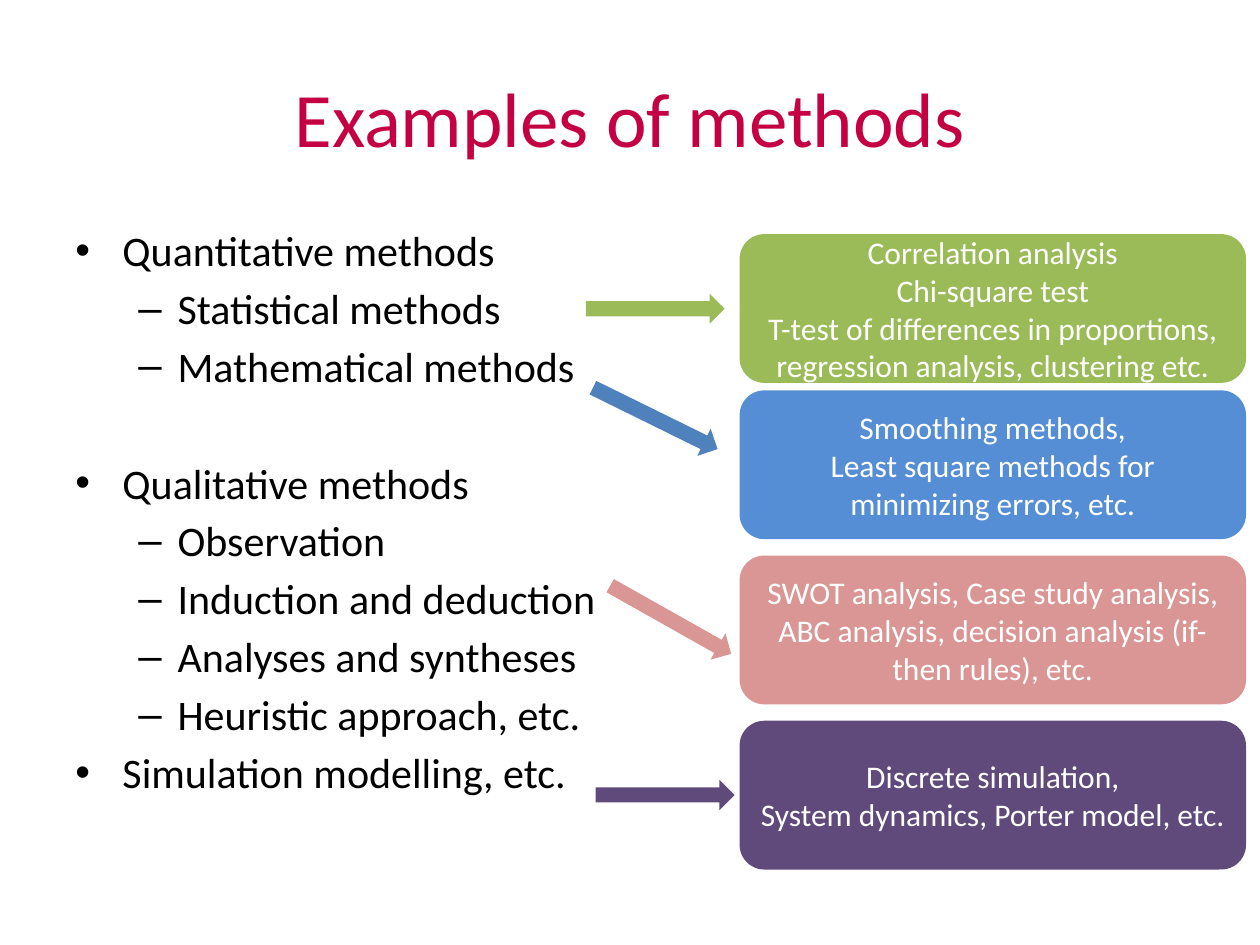
from lxml import etree
from pptx import Presentation
from pptx import util as u
from pptx.dml import color
from pptx.enum import shapes, text
from pptx.oxml import ns

COLORS = {
    "title": "C40043", "black": "000000", "white": "FFFFFF",
    "green": "9BBB59", "blue": "558ED5", "dark_blue": "4F81BD",
    "pink": "D99694", "purple": "604A7B",
}
FONT = "Calibri"

METHODS = [
    ("Quantitative methods", ["Statistical methods", "Mathematical methods"]),
    ("Qualitative methods", ["Observation", "Induction and deduction",
                             "Analyses and syntheses", "Heuristic approach, etc."]),
    ("Simulation modelling, etc.", []),
]
# bullet, left margin and hanging indent in cm
LEVELS = [("•", 0.95, 0.95), ("–", 2.06, 0.79)]
LINE_GAP, GROUP_GAP = 4.3, 37.9

# top in cm, fill, lines
CARDS = [
    (4.72, "green", ["Correlation analysis", "Chi-square test",
                     "T-test of differences in proportions, regression analysis, clustering etc."]),
    (7.87, "blue", ["Smoothing methods,", "Least square methods for minimizing errors, etc."]),
    (11.2, "pink", ["SWOT analysis, Case study analysis,",
                    "ABC analysis, decision analysis (if-then rules), etc."]),
    (14.53, "purple", ["Discrete simulation,", "System dynamics, Porter model, etc."]),
]
# left and top in cm, rotation in degrees, fill
ARROWS = [
    (11.81, 5.92, 0, "green"),
    (11.81, 8.13, 26.2, "dark_blue"),
    (12.12, 12.19, 29.4, "pink"),
    (12.01, 15.72, 0, "purple"),
]


def rgb(name):
    return color.RGBColor.from_string(COLORS[name])


def write(paragraph, words, size, fill, **formats):
    paragraph.text = words
    for name, value in formats.items():
        setattr(paragraph, name, value)
    for name, value in {"name": FONT, "size": u.Pt(size)}.items():
        setattr(paragraph.font, name, value)
    paragraph.font.color.rgb = rgb(fill)


def next_paragraph(frame, index):
    return frame.add_paragraph() if index else frame.paragraphs[0]


def add_text_frame(slide, box, anchor):
    frame = slide.shapes.add_textbox(*map(u.Cm, box)).text_frame
    frame.word_wrap = True
    frame.vertical_anchor = anchor
    return frame


def add_filled_shape(slide, kind, box, fill):
    shape = slide.shapes.add_shape(kind, *map(u.Cm, box))
    shape.shadow.inherit = False
    shape.fill.solid()
    shape.fill.fore_color.rgb = rgb(fill)
    shape.line.fill.background()
    return shape


def add_title(slide, box):
    frame = add_text_frame(slide, box, text.MSO_ANCHOR.MIDDLE)
    write(frame.paragraphs[0], "Examples of methods", 44, "title",
          alignment=text.PP_ALIGN.CENTER)


def set_bullet(paragraph, level):
    mark, margin, hanging = LEVELS[level]
    properties = paragraph._p.get_or_add_pPr()
    properties.set("marL", str(u.Cm(margin)))
    properties.set("indent", str(-u.Cm(hanging)))
    for tag, name, value in (("a:buFont", "typeface", "Arial"), ("a:buChar", "char", mark)):
        etree.SubElement(properties, ns.qn(tag)).set(name, value)


def add_method_list(slide, box):
    frame = add_text_frame(slide, box, text.MSO_ANCHOR.TOP)
    rows = []
    for index, (heading, items) in enumerate(METHODS):
        gap = (0, GROUP_GAP, LINE_GAP)[index]
        rows.append((heading, 0, gap))
        rows += [(item, 1, LINE_GAP) for item in items]
    for index, (words, level, gap) in enumerate(rows):
        paragraph = next_paragraph(frame, index)
        set_bullet(paragraph, level)
        write(paragraph, words, 24, "black", level=level, space_before=u.Pt(gap))


def add_card(slide, box, fill, lines):
    shape = add_filled_shape(slide, shapes.MSO_SHAPE.ROUNDED_RECTANGLE, box, fill)
    frame = shape.text_frame
    frame.word_wrap = True
    frame.vertical_anchor = text.MSO_ANCHOR.MIDDLE
    for index, line in enumerate(lines):
        write(next_paragraph(frame, index), line, 18, "white",
              alignment=text.PP_ALIGN.CENTER)


def add_arrow(slide, box, rotation, fill):
    arrow = add_filled_shape(slide, shapes.MSO_SHAPE.RIGHT_ARROW, box, fill)
    arrow.rotation = rotation


def main():
    presentation = Presentation()
    presentation.slide_width, presentation.slide_height = u.Cm(25.4), u.Cm(19.05)
    slide = presentation.slides.add_slide(presentation.slide_layouts[6])
    add_title(slide, (1.27, 0.76, 22.86, 3.18))
    for top, fill, lines in CARDS:
        add_card(slide, (14.91, top, 10.21, 3), fill, lines)
    add_method_list(slide, (1.27, 4.4, 22.86, 12.57))
    for left, top, rotation, fill in ARROWS:
        add_arrow(slide, (left, top, 2.8, 0.61), rotation, fill)
    presentation.save("out.pptx")


if __name__ == "__main__":
    main()
